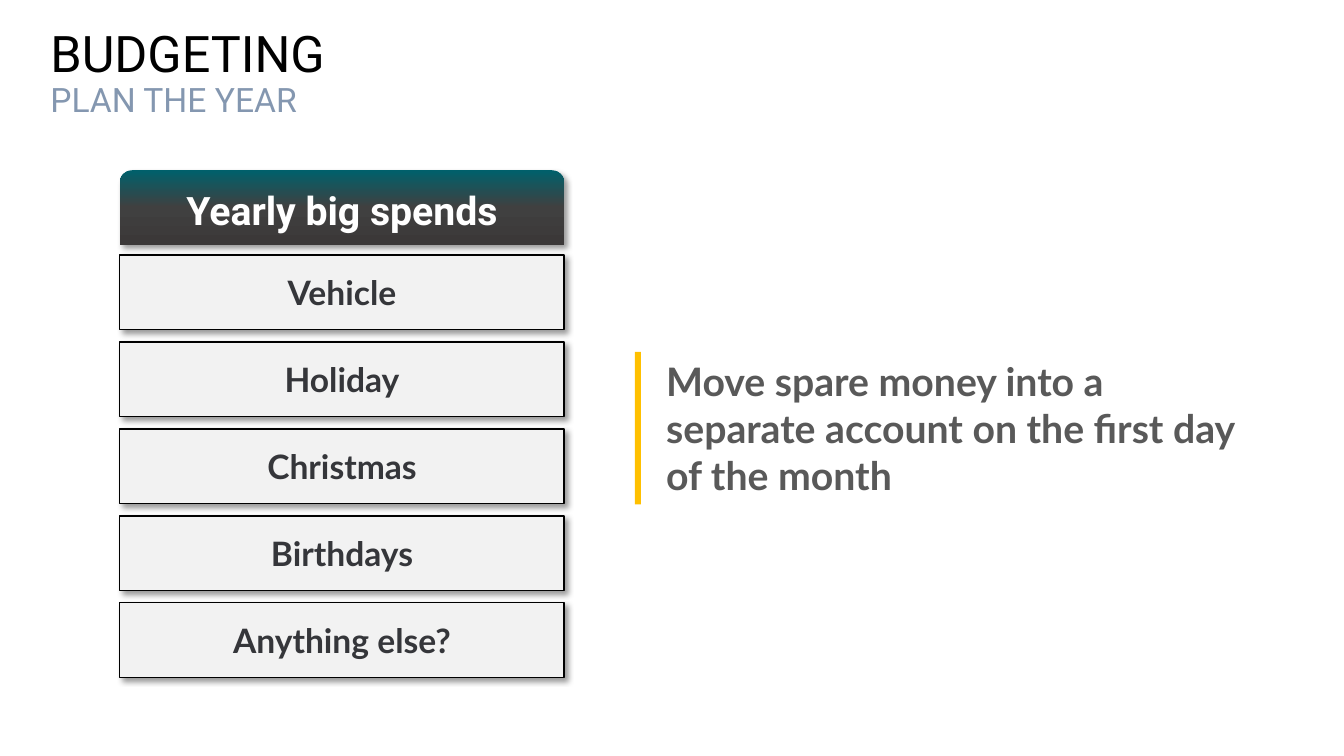
from dataclasses import dataclass

from pptx import Presentation
from pptx.dml.color import RGBColor
from pptx.enum.shapes import MSO_SHAPE
from pptx.enum.text import MSO_ANCHOR, MSO_AUTO_SIZE, PP_ALIGN
from pptx.oxml import parse_xml
from pptx.oxml.ns import nsdecls, qn
from pptx.util import Cm, Pt


@dataclass(frozen=True)
class Theme:
    heading_font: str = "Roboto"
    body_font: str = "Lato"
    title: str = "000000"
    subtitle: str = "8497B0"
    header_text: str = "FFFFFF"
    header_stops: tuple = ((0, "00606B"), (50, "404040"), (100, "3B3838"))
    row_fill: str = "F2F2F2"
    row_line: str = "000000"
    row_text: str = "35363A"
    advice: str = "595959"
    accent: str = "FFC000"
    shadow: str = "000000"
    title_size: int = 36
    large_size: int = 28
    text_size: int = 24


class SlideBuilder:
    def __init__(self, slide, theme):
        self.s = slide
        self.theme = theme

    def style(self, p, font, size, color, bold=False):
        p.font.name = font
        p.font.size = Pt(size)
        p.font.bold = bold
        p.font.color.rgb = RGBColor.from_string(color)

    def text_box(self, left, top, width, height):
        sp = self.s.shapes.add_textbox(Cm(left), Cm(top), Cm(width), Cm(height))
        sp.text_frame.word_wrap = True
        return sp.text_frame

    def shape(self, kind, left, top, width, height):
        sp = self.s.shapes.add_shape(kind, Cm(left), Cm(top), Cm(width), Cm(height))
        sp.shadow.inherit = False
        sp.line.fill.background()
        return sp

    def heading(self, title, subtitle):
        t = self.theme
        tf = self.text_box(1.02, 0.86, 25.88, 2.03)
        tf.vertical_anchor = MSO_ANCHOR.MIDDLE
        tf.text = f"{title}\n{subtitle}"
        styles = ((t.title_size, t.title), (t.text_size, t.subtitle))
        for p, (size, color) in zip(tf.paragraphs, styles):
            p.line_spacing = 0.9
            self.style(p, t.heading_font, size, color)

    def card(self, kind, top, text, font, size, color):
        sp = self.shape(kind, 3.02, top, 11.2, 1.88)
        effects = sp._element.spPr.find(qn("a:effectLst"))
        effects.append(parse_xml(
            f'<a:outerShdw {nsdecls("a")} blurRad="{Pt(4)}" dist="{Pt(3)}" '
            f'dir="2700000" algn="tl" rotWithShape="0">'
            f'<a:srgbClr val="{self.theme.shadow}"><a:alpha val="40000"/></a:srgbClr>'
            f'</a:outerShdw>'))
        tf = sp.text_frame
        tf.vertical_anchor = MSO_ANCHOR.MIDDLE
        p = tf.paragraphs[0]
        p.text = text
        p.alignment = PP_ALIGN.CENTER
        self.style(p, font, size, color, bold=True)
        return sp

    def header_card(self, top, text):
        t = self.theme
        sp = self.card(MSO_SHAPE.ROUND_2_SAME_RECTANGLE, top, text,
                       t.heading_font, t.large_size, t.header_text)
        sp.fill.gradient()
        stops = "".join(f'<a:gs pos="{pos * 1000}"><a:srgbClr val="{color}"/></a:gs>'
                        for pos, color in t.header_stops)
        spPr = sp._element.spPr
        spPr.replace(spPr.find(qn("a:gradFill")), parse_xml(
            f'<a:gradFill {nsdecls("a")} rotWithShape="1"><a:gsLst>{stops}</a:gsLst>'
            f'<a:lin ang="5400000" scaled="0"/></a:gradFill>'))

    def row_card(self, top, text):
        t = self.theme
        sp = self.card(MSO_SHAPE.RECTANGLE, top, text,
                       t.body_font, t.text_size, t.row_text)
        sp.fill.solid()
        sp.fill.fore_color.rgb = RGBColor.from_string(t.row_fill)
        sp.line.color.rgb = RGBColor.from_string(t.row_line)
        sp.line.width = Pt(1)

    def advice(self, text):
        t = self.theme
        top, height = 8.87, 3.84
        tf = self.text_box(16.54, top, 15.06, height)
        tf.auto_size = MSO_AUTO_SIZE.SHAPE_TO_FIT_TEXT
        p = tf.paragraphs[0]
        p.text = text
        self.style(p, t.body_font, t.large_size, t.advice, bold=True)
        bar = self.shape(MSO_SHAPE.RECTANGLE, 16, top, 0.15, height)
        bar.fill.solid()
        bar.fill.fore_color.rgb = RGBColor.from_string(t.accent)


def main():
    prs = Presentation()
    prs.slide_width, prs.slide_height = Cm(33.87), Cm(19.05)
    builder = SlideBuilder(prs.slides.add_slide(prs.slide_layouts[6]), Theme())
    builder.heading("BUDGETING", "PLAN THE YEAR")
    builder.header_card(4.29, "Yearly big spends")
    spends = ("Vehicle", "Holiday", "Christmas", "Birthdays", "Anything else?")
    for i, spend in enumerate(spends):
        builder.row_card(6.43 + 2.19 * i, spend)
    builder.advice("Move spare money into a separate account on the first day of the month")
    prs.save("out.pptx")


if __name__ == "__main__":
    main()
